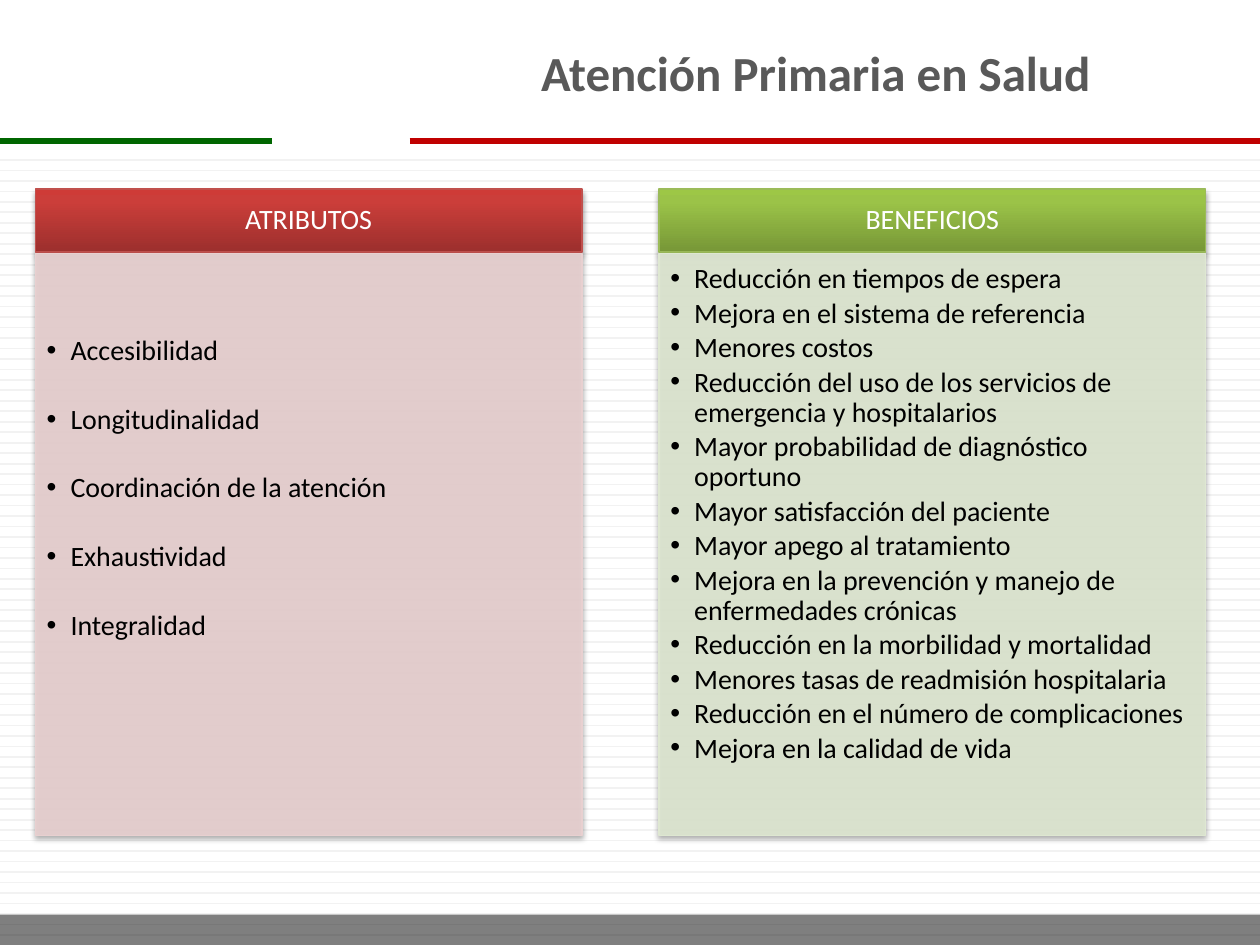
from dataclasses import dataclass

from lxml import etree
from pptx import Presentation
from pptx.dml.color import RGBColor
from pptx.enum.shapes import MSO_CONNECTOR, MSO_SHAPE
from pptx.enum.text import MSO_ANCHOR, PP_ALIGN
from pptx.oxml.ns import qn
from pptx.util import Inches, Pt

STRAIGHT = MSO_CONNECTOR.STRAIGHT
RECTANGLE = MSO_SHAPE.RECTANGLE
TOP, MIDDLE = MSO_ANCHOR.TOP, MSO_ANCHOR.MIDDLE
LEFT, CENTER = PP_ALIGN.LEFT, PP_ALIGN.CENTER

COLORS = {
    "rule": "F2F2F2",
    "green_bar": "006600",
    "red_bar": "C00000",
    "title": "595959",
    "black": "000000",
    "white": "FFFFFF",
    "red_edge": "C0504D",
    "red_panel": "E8D0D0",
    "green_edge": "9BBB59",
    "green_panel": "DEE7D1",
}
FONT = "Calibri"
SLIDE_WIDTH = 10
RULE_COUNT = 75
RULE_TOP, RULE_BOTTOM = 1.27, 7.42
BAR_TOP = 1.12
PANEL_WIDTH = 4.34
HEADER_TOP, HEADER_HEIGHT = 1.5, 0.5
BODY_TOP, BODY_HEIGHT = 2.01, 4.62


@dataclass
class Panel:
    left: float
    heading: str
    gradient: list[tuple[int, str]]
    edge: str
    background: str
    items: list[str]
    top_inset: float
    space_after: float


PANELS = [
    Panel(
        0.28, "ATRIBUTOS",
        [(0, "9C2F2D"), (80, "CB3E3A"), (100, "CE3B37")],
        "red_edge", "red_panel",
        [
            "Accesibilidad",
            "Longitudinalidad",
            "Coordinación de la atención",
            "Exhaustividad",
            "Integralidad",
        ],
        0.66, 22,
    ),
    Panel(
        5.23, "BENEFICIOS",
        [(0, "779737"), (80, "9BC348"), (100, "9DC746")],
        "green_edge", "green_panel",
        [
            "Reducción en tiempos de espera",
            "Mejora en el sistema de referencia",
            "Menores costos",
            "Reducción del uso de los servicios de emergencia y hospitalarios",
            "Mayor probabilidad de diagnóstico oportuno",
            "Mayor satisfacción del paciente",
            "Mayor apego al tratamiento",
            "Mejora en la prevención y manejo de enfermedades crónicas",
            "Reducción en la morbilidad y mortalidad",
            "Menores tasas de readmisión hospitalaria",
            "Reducción en el número de complicaciones",
            "Mejora en la calidad de vida",
        ],
        0.09, 2.4,
    ),
]


def rgb(name: str) -> RGBColor:
    return RGBColor.from_string(COLORS[name])


def add_line(slide, start: float, end: float, top: float, color: str, width: float) -> None:
    line = slide.shapes.add_connector(
        STRAIGHT, Inches(start), Inches(top), Inches(end), Inches(top)
    )
    line.line.color.rgb = rgb(color)
    line.line.width = Pt(width)
    etree.SubElement(line._element.spPr, qn("a:effectLst"))


def add_rectangle(slide, left: float, top: float, width: float, height: float):
    shape = slide.shapes.add_shape(
        RECTANGLE, Inches(left), Inches(top), Inches(width), Inches(height)
    )
    shape.shadow.inherit = False
    return shape


def fill_translucent(shape, color: str, opacity: int) -> None:
    shape.fill.solid()
    shape.fill.fore_color.rgb = rgb(color)
    value = shape._element.spPr.find(qn("a:solidFill"))[0]
    etree.SubElement(value, qn("a:alpha"), val=str(opacity * 1000))


def fill_gradient(shape, stops: list[tuple[int, str]]) -> None:
    shape.fill.gradient()
    shape.fill.gradient_angle = 90
    stop_list = shape._element.spPr.find(qn("a:gradFill")).find(qn("a:gsLst"))
    for old_stop in list(stop_list):
        stop_list.remove(old_stop)
    for position, color in stops:
        stop = etree.SubElement(stop_list, qn("a:gs"), pos=str(position * 1000))
        etree.SubElement(stop, qn("a:srgbClr"), val=color)


def add_edge_and_shadow(shape, edge: str) -> None:
    shape.line.color.rgb = rgb(edge)
    shape.line.width = Pt(0.75)
    effects = shape._element.spPr.find(qn("a:effectLst"))
    shadow = etree.SubElement(
        effects, qn("a:outerShdw"), blurRad=str(Pt(3.1)), dist=str(Pt(1.8)),
        dir="5400000", rotWithShape="0",
    )
    color = etree.SubElement(shadow, qn("a:srgbClr"), val=COLORS["black"])
    etree.SubElement(color, qn("a:alpha"), val="35000")


def set_insets(text_frame, left: float, top: float, right: float, bottom: float) -> None:
    text_frame.word_wrap = True
    text_frame.margin_left, text_frame.margin_top = Inches(left), Inches(top)
    text_frame.margin_right, text_frame.margin_bottom = Inches(right), Inches(bottom)


def format_paragraph(paragraph, size: float, color: str, alignment, bold: bool = False) -> None:
    paragraph.alignment = alignment
    for run in paragraph.runs:
        run.font.name = FONT
        run.font.size = Pt(size)
        run.font.bold = bold
        run.font.color.rgb = rgb(color)


def add_bullet(paragraph) -> None:
    properties = paragraph._p.get_or_add_pPr()
    properties.set("marL", str(Inches(0.19)))
    properties.set("indent", str(Inches(-0.19)))
    etree.SubElement(properties, qn("a:buFont"), typeface="Arial")
    etree.SubElement(properties, qn("a:buChar"), char="•")


def add_panel(slide, panel: Panel) -> None:
    header = add_rectangle(slide, panel.left, HEADER_TOP, PANEL_WIDTH, HEADER_HEIGHT)
    fill_gradient(header, panel.gradient)
    add_edge_and_shadow(header, panel.edge)
    set_insets(header.text_frame, 0.12, 0.07, 0.12, 0.07)
    header.text_frame.vertical_anchor = MIDDLE
    header.text_frame.text = panel.heading
    heading = header.text_frame.paragraphs[0]
    heading.line_spacing = 0.9
    format_paragraph(heading, 16, "white", CENTER)

    body = add_rectangle(slide, panel.left, BODY_TOP, PANEL_WIDTH, BODY_HEIGHT)
    fill_translucent(body, panel.background, 90)
    add_edge_and_shadow(body, panel.background)
    set_insets(body.text_frame, 0.09, panel.top_inset, 0.12, 0.14)
    body.text_frame.vertical_anchor = TOP
    body.text_frame.text = "\n".join(panel.items)
    for paragraph in body.text_frame.paragraphs:
        add_bullet(paragraph)
        paragraph.line_spacing = 0.9
        paragraph.space_after = Pt(panel.space_after)
        format_paragraph(paragraph, 16, "black", LEFT)


def main() -> None:
    presentation = Presentation()
    presentation.slide_width, presentation.slide_height = Inches(SLIDE_WIDTH), Inches(7.5)
    slide = presentation.slides.add_slide(presentation.slide_layouts[6])

    rule_gap = (RULE_BOTTOM - RULE_TOP) / (RULE_COUNT - 1)
    for index in range(RULE_COUNT):
        add_line(slide, 0, SLIDE_WIDTH, RULE_TOP + index * rule_gap, "rule", 1)
    footer = add_rectangle(slide, 0, 7.26, SLIDE_WIDTH, 0.24)
    fill_translucent(footer, "black", 50)
    footer.line.fill.background()
    add_line(slide, 0, 2.16, BAR_TOP, "green_bar", 3)
    add_line(slide, 3.25, SLIDE_WIDTH, BAR_TOP, "red_bar", 3)

    title = slide.shapes.add_textbox(Inches(3.11), Inches(0.29), Inches(6.73), Inches(0.57))
    title.text_frame.word_wrap = True
    title.text_frame.text = "Atención Primaria en Salud"
    format_paragraph(title.text_frame.paragraphs[0], 28, "title", CENTER, bold=True)

    for panel in PANELS:
        add_panel(slide, panel)
    presentation.save("out.pptx")


if __name__ == "__main__":
    main()
